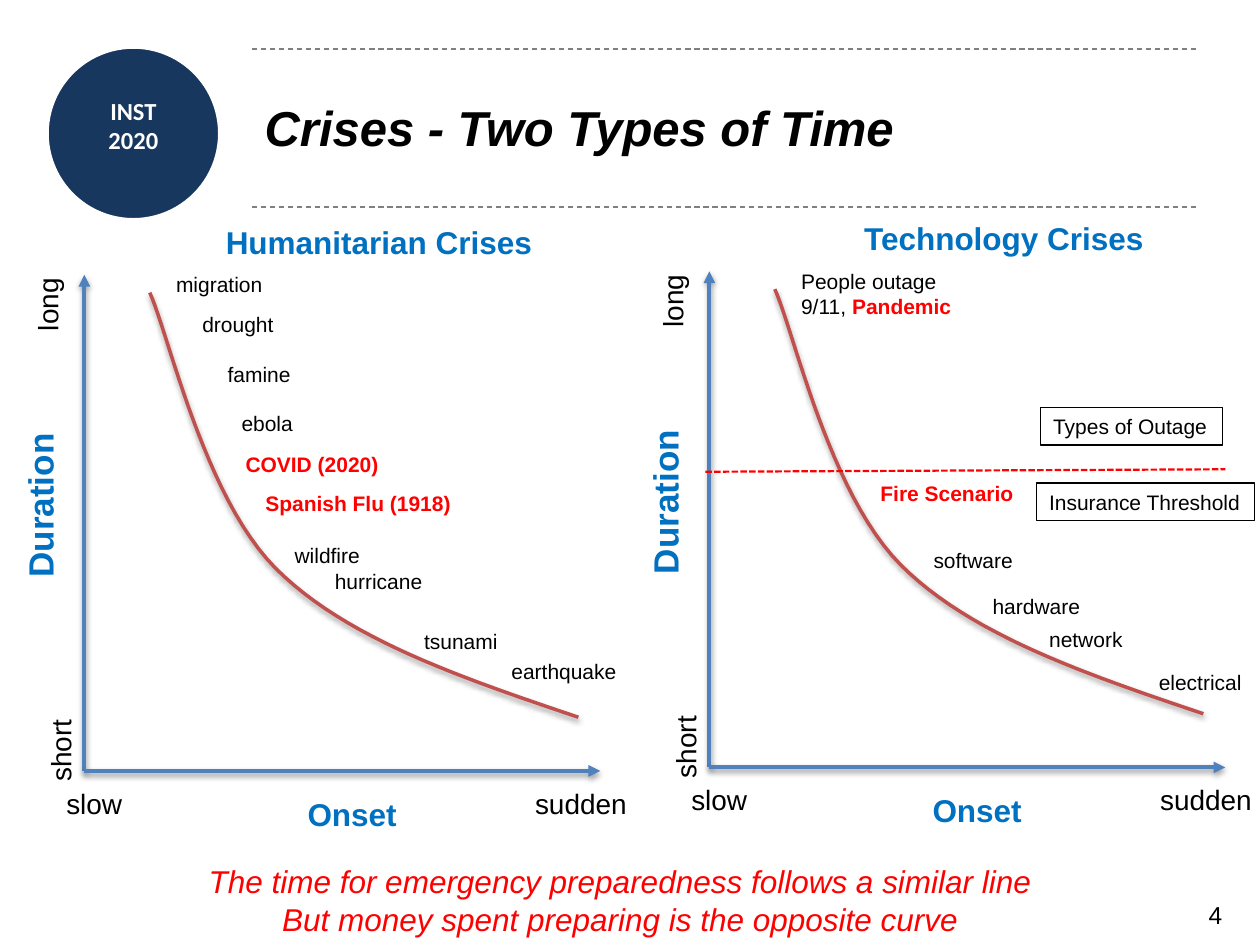
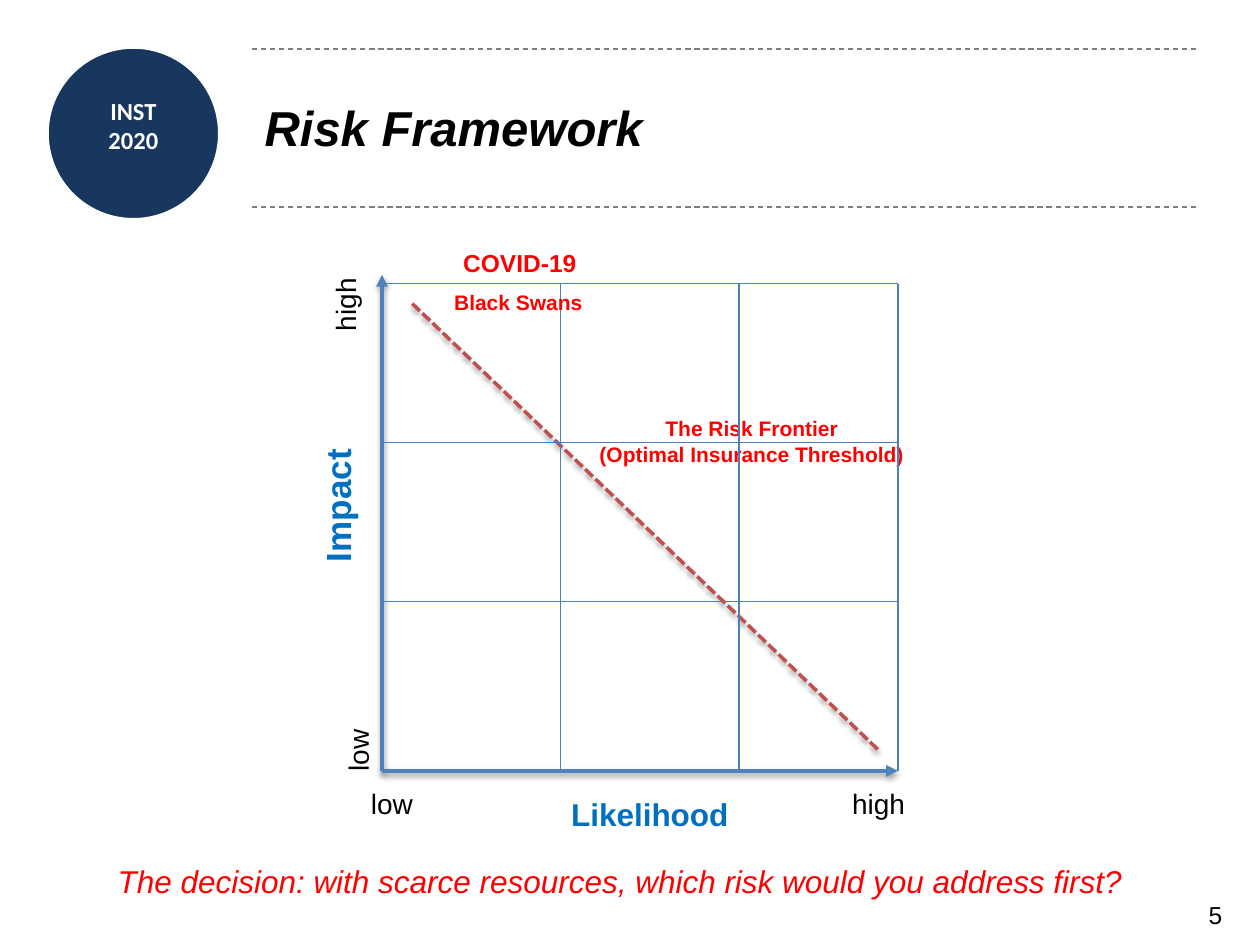
import pptx
import pptx.dml.color
import pptx.enum.dml
import pptx.enum.shapes
import pptx.enum.text
import pptx.oxml
import pptx.oxml.ns
import pptx.util
from lxml import etree

Cm = pptx.util.Cm
Pt = pptx.util.Pt
Align = pptx.enum.text.PP_ALIGN
Dash = pptx.enum.dml.MSO_LINE
Shape = pptx.enum.shapes.MSO_SHAPE
qn = pptx.oxml.ns.qn

COLORS = {
    "navy": "17375E", "white": "FFFFFF", "black": "000000", "gray": "808080",
    "axis": "4F81BD", "grid": "4B7EBC", "curve": "C0504D",
    "heading": "0070C0", "alert": "FF0000",
}
FONT = "Arial"
AXIS_W, AXIS_H = 10.4, 10
CURVE = [(9.96, 8.92), (7.62, 8.13), (5.28, 7.34), (3.86, 5.92),
         (2.41, 4.47), (1.7, 1.19), (1.32, 0.36)]
HUMANITARIAN = [
    ("migration", 1.6, -0.2, 2.26), ("drought", 2.13, 0.61, 1.96),
    ("famine", 2.64, 1.63, 1.8), ("ebola", 2.92, 2.62, 1.55),
    ("wildfire", 3.99, 5.28, 1.83), ("hurricane", 4.8, 5.79, 2.29),
    ("tsunami", 6.6, 7.01, 2.01), ("earthquake", 8.36, 7.62, 2.74),
]
HUMANITARIAN_ALERTS = [("COVID (2020)", 3, 3.43, 3.23),
                       ("Spanish Flu (1918)", 3.4, 4.22, 4.29)]
TECHNOLOGY = [
    ("software", 4.27, 5.44, 2.13), ("hardware", 5.46, 6.38, 2.29),
    ("network", 6.6, 7.04, 2.01), ("electrical", 8.81, 7.9, 2.18),
]
TECHNOLOGY_BOXES = [("Types of Outage", 6.68, 2.74, 3.66),
                    ("Insurance Threshold", 6.6, 4.27, 4.39)]


def rgb(name):
    return pptx.dml.color.RGBColor.from_string(COLORS[name])


def style(p, size, color="black", bold=False, italic=False, align=Align.LEFT, font=FONT):
    p.alignment = align
    p.font.name, p.font.size = font, Pt(size)
    p.font.bold, p.font.italic = bold, italic
    p.font.color.rgb = rgb(color)


def add_text(s, text, x, y, w, h=0.76, size=12, wrap=False, **look):
    sp = s.shapes.add_textbox(Cm(x), Cm(y), Cm(w), Cm(h))
    tf = sp.text_frame
    tf.text = text
    tf.word_wrap = wrap
    tf.auto_size = pptx.enum.text.MSO_AUTO_SIZE.SHAPE_TO_FIT_TEXT
    for p in tf.paragraphs:
        style(p, size, **look)
    return sp


def add_centred(s, text, cx, cy, w, h, size, rotation=0, **look):
    sp = add_text(s, text, cx - w / 2, cy - h / 2, w, h, size,
                  align=Align.CENTER, **look)
    sp.rotation = rotation
    return sp


def set_effects(sp, shadow):
    effects = etree.SubElement(sp._element.spPr, qn("a:effectLst"))
    if shadow:
        outer = etree.SubElement(effects, qn("a:outerShdw"), blurRad="40000",
                                 dist="20000", dir="5400000", rotWithShape="0")
        color = etree.SubElement(outer, qn("a:srgbClr"), val=COLORS["black"])
        etree.SubElement(color, qn("a:alpha"), val="38000")


def add_line(s, x1, y1, x2, y2, color, width, dash=None, arrow=False, shadow=False):
    sp = s.shapes.add_connector(pptx.enum.shapes.MSO_CONNECTOR.STRAIGHT,
                                Cm(x1), Cm(y1), Cm(x2), Cm(y2))
    sp.line.color.rgb = rgb(color)
    sp.line.width = Pt(width)
    if dash:
        sp.line.dash_style = dash
    if arrow:
        etree.SubElement(sp.line._get_or_add_ln(), qn("a:tailEnd"), type="triangle")
    set_effects(sp, shadow)


def bezier(a, b, c, d, steps=24):
    for i in range(1, steps + 1):
        t = i / steps
        u = 1 - t
        yield tuple(u**3 * k + 3 * u * u * t * m + 3 * u * t * t * n + t**3 * o
                    for k, m, n, o in zip(a, b, c, d))


def add_curve(s, x, y):
    points = [CURVE[0], *bezier(*CURVE[:4]), *bezier(*CURVE[3:])]
    points = [(Cm(x + px), Cm(y + py)) for px, py in points]
    fb = s.shapes.build_freeform(*points[0])
    fb.add_line_segments(points[1:], close=False)
    sp = fb.convert_to_shape()
    sp.fill.background()
    sp.line.color.rgb = rgb("curve")
    sp.line.width = Pt(2)
    set_effects(sp, True)


def add_frame(prs, title, number):
    s = prs.slides.add_slide(prs.slide_layouts[5])
    sp = s.shapes.add_shape(Shape.OVAL, Cm(0.94), Cm(0.94), Cm(3.5), Cm(3.5))
    sp.shadow.inherit = False
    sp.fill.solid()
    sp.fill.fore_color.rgb = rgb("navy")
    sp.line.color.rgb = rgb("white")
    sp.line.width = Pt(2.5)
    tf = add_text(s, "INST\n2020", 1.09, 1.93, 3.2, 1.19, 14, wrap=True, color="white",
                  bold=True, align=Align.CENTER, font="Calibri").text_frame
    tf.margin_left = tf.margin_right = tf.margin_top = tf.margin_bottom = 0
    add_text(s, str(number), 21.51, 18.01, 3.38, 1.04, 14, wrap=True, align=Align.RIGHT)
    for y in (0.99, 4.17):
        add_line(s, 5.08, y, 24.13, y, "gray", 0.75, Dash.DASH)
    sp = s.shapes.title
    sp.left, sp.top, sp.width, sp.height = Cm(5.08), Cm(0.97), Cm(19.05), Cm(3.18)
    tf = sp.text_frame
    tf.text = title
    tf.auto_size = pptx.enum.text.MSO_AUTO_SIZE.NONE
    tf.vertical_anchor = pptx.enum.text.MSO_ANCHOR.MIDDLE
    style(tf.paragraphs[0], 28, bold=True, italic=True)
    return s


def add_axes(s, x, y, y_title, x_title, y_ends, x_ends):
    bottom = y + AXIS_H
    add_line(s, x, bottom, x, y, "axis", 2.25, arrow=True, shadow=True)
    add_line(s, x, bottom, x + AXIS_W, bottom, "axis", 2.25, arrow=True, shadow=True)
    add_centred(s, y_title, x - 0.89, y + 4.65, 3.45, 1.12, 20, 270,
                color="heading", bold=True)
    add_centred(s, x_title, x + 5.4, y + 10.87, 5.2, 1.02, 18,
                color="heading", bold=True, wrap=True)
    places = [(-0.48, 9.59, 270), (-0.74, 0.6, 270), (0.2, 10.66, 0), (10.01, 10.66, 0)]
    for text, (dx, dy, rotation) in zip(y_ends + x_ends, places):
        add_centred(s, text, x + dx, y + dy, 3.2, 0.94, 16, rotation, wrap=True)


def add_labels(s, x, y, labels, **look):
    return [add_text(s, text, x + dx, y + dy, w, **look) for text, dx, dy, w in labels]


def add_crisis_panel(s, x, y, heading, heading_w):
    add_axes(s, x, y, "Duration", "Onset", ("short", "long"), ("slow", "sudden"))
    add_curve(s, x, y)
    add_centred(s, heading, x + 5.94, y - 0.66, heading_w, 1.02, 18,
                color="heading", bold=True)


def add_humanitarian(s, x, y):
    add_crisis_panel(s, x, y, "Humanitarian Crises", 6.76)
    add_labels(s, x, y, HUMANITARIAN)
    add_labels(s, x, y, HUMANITARIAN_ALERTS, color="alert", bold=True)


def add_technology(s, x, y):
    add_crisis_panel(s, x, y, "Technology Crises", 6.2)
    sp = add_text(s, "People outage\n9/11, ", x + 1.6, y - 0.18, 3.56, 1.27)
    r = sp.text_frame.paragraphs[1].add_run()
    r.text = "Pandemic"
    r.font.bold = True
    r.font.color.rgb = rgb("alert")
    add_labels(s, x, y, TECHNOLOGY)
    add_labels(s, x, y, [("Fire Scenario", 3.2, 4.09, 3.23)], color="alert", bold=True)
    add_line(s, x - 0.08, y + 4.04, x + AXIS_W, y + 3.99, "alert", 1.25, Dash.SQUARE_DOT)
    for sp in add_labels(s, x, y, TECHNOLOGY_BOXES):
        sp.line.color.rgb = rgb("black")
        sp.line.width = Pt(0.75)


def add_risk_grid(s, x, y):
    add_axes(s, x, y, "Impact", "Likelihood", ("low", "high"), ("low", "high"))
    add_text(s, "The Risk Frontier\n(Optimal Insurance Threshold)", x + 4.09, y + 2.72,
             6.73, 1.27, color="alert", bold=True, align=Align.CENTER)
    add_line(s, x + 0.61, y + 0.58, x + 10.01, y + 9.58, "curve", 2,
             Dash.SQUARE_DOT, shadow=True)
    top = y + 0.18
    for dx in (3.6, 7.2, AXIS_W):
        add_line(s, x + dx, top, x + dx, y + AXIS_H, "grid", 0.75)
    for i in range(3):
        row_y = top + 3.2 * i
        add_line(s, x, row_y, x + AXIS_W, row_y, "grid", 0.75)
    add_text(s, "Black Swans", x + 1.19, top, 3.12,
             color="alert", bold=True, align=Align.CENTER)
    add_text(s, "COVID-19", x + 1.37, y - 0.66, 2.82, 0.86, 14,
             color="alert", bold=True, align=Align.CENTER)


def add_takeaway(s, text, w, h):
    add_text(s, text, 12.5 - w / 2, 17.25, w, h, 18,
             color="alert", italic=True, align=Align.CENTER)


def main():
    prs = pptx.Presentation()
    prs.slide_width, prs.slide_height = Cm(25.4), Cm(19.05)
    s = add_frame(prs, "Crises - Two Types of Time", 4)
    add_humanitarian(s, 1.7, 5.54)
    add_technology(s, 14.3, 5.47)
    add_takeaway(s, "The time for emergency preparedness follows a similar line\n"
                    "But money spent preparing is the opposite curve", 17.91, 1.8)
    s = add_frame(prs, "Risk Framework", 5)
    add_risk_grid(s, 7.7, 5.54)
    add_takeaway(s, "The decision: with scarce resources, which risk would you "
                    "address first?", 21.23, 1.02)
    prs.save("out.pptx")


if __name__ == "__main__":
    main()
